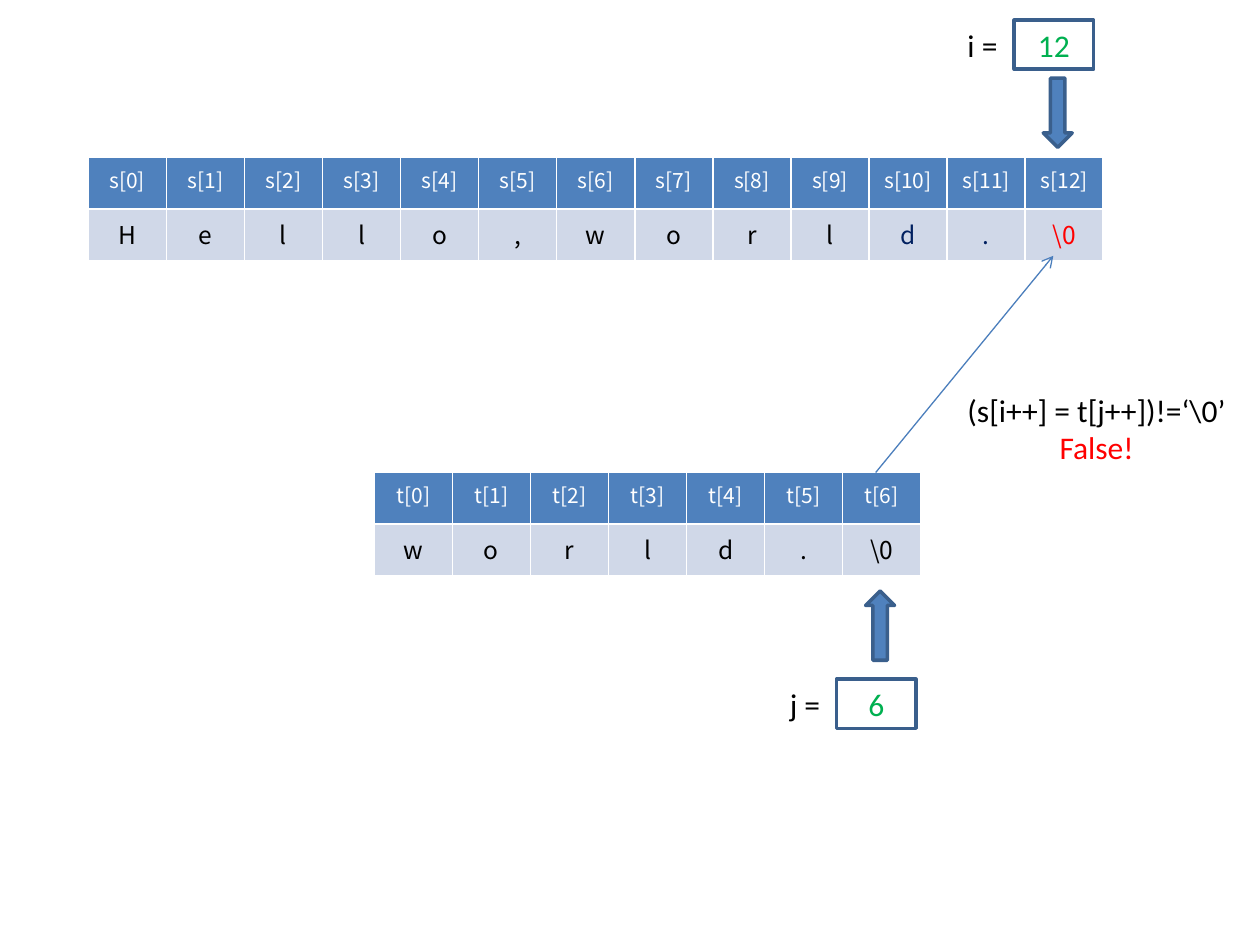
from lxml import etree
from pptx import Presentation
from pptx.dml.color import RGBColor
from pptx.enum.shapes import MSO_CONNECTOR, MSO_SHAPE
from pptx.enum.text import MSO_ANCHOR, MSO_AUTO_SIZE, PP_ALIGN
from pptx.oxml.ns import qn
from pptx.util import Inches, Pt

CENTER, LEFT = PP_ALIGN.CENTER, PP_ALIGN.LEFT
MIDDLE = MSO_ANCHOR.MIDDLE
FIT_SHAPE = MSO_AUTO_SIZE.SHAPE_TO_FIT_TEXT
RECTANGLE = MSO_SHAPE.RECTANGLE
DOWN_ARROW, UP_ARROW = MSO_SHAPE.DOWN_ARROW, MSO_SHAPE.UP_ARROW
STRAIGHT = MSO_CONNECTOR.STRAIGHT

TABLE_FONT, TEXT_FONT = "Noto Sans CJK JP", "Calibri"
CELL_WIDTH, CELL_HEIGHT = 0.62, 0.41
COLORS = {
    "white": "FFFFFF",
    "black": "000000",
    "blue": "4F81BD",
    "outline": "3A5F8C",
    "link": "4B7EBC",
    "pale": "D0D8E8",
    "navy": "002060",
    "red": "FF0000",
    "green": "00B050",
}


def color(name):
    return RGBColor.from_string(COLORS[name])


def format_paragraph(para, size, font, color_name, align=CENTER):
    para.alignment = align
    for span in para.runs:
        span.font.size = Pt(size)
        span.font.name = font
        span.font.bold = False
        span.font.color.rgb = color(color_name)


def fill_cell(cell, text, size, text_color, fill):
    cell.fill.solid()
    cell.fill.fore_color.rgb = color(fill)
    cell.text = text
    format_paragraph(cell.text_frame.paragraphs[0], size, TABLE_FONT, text_color)


def add_array(page, name, characters, left, top, highlights):
    """Draw an array as index headings over its characters; highlights maps index to colour."""
    count = len(characters)
    frame = page.shapes.add_table(2, count, Inches(left), Inches(top),
                                  Inches(CELL_WIDTH * count), Inches(CELL_HEIGHT * 2))
    table = frame.table
    for row in table.rows:
        row.height = Inches(CELL_HEIGHT)
    for index, character in enumerate(characters):
        table.columns[index].width = Inches(CELL_WIDTH)
        fill_cell(table.cell(0, index), f"{name}[{index}]", 12, "white", "blue")
        fill_cell(table.cell(1, index), character, 14,
                  highlights.get(index, "black"), "pale")


def add_block(page, kind, left, top, width, height, fill):
    block = page.shapes.add_shape(kind, Inches(left), Inches(top),
                                  Inches(width), Inches(height))
    block.shadow.inherit = False
    block.fill.solid()
    block.fill.fore_color.rgb = color(fill)
    block.line.color.rgb = color("outline")
    block.line.width = Pt(2)
    return block


def add_text(page, left, top, width, height, lines):
    """Add a text box from (text, colour, alignment) lines."""
    box = page.shapes.add_textbox(Inches(left), Inches(top), Inches(width), Inches(height))
    frame = box.text_frame
    frame.word_wrap = False
    frame.auto_size = FIT_SHAPE
    frame.text = "\n".join(text for text, _, _ in lines)
    for para, (_, color_name, align) in zip(frame.paragraphs, lines):
        format_paragraph(para, 18, TEXT_FONT, color_name, align)


def add_counter(page, name, value, left, top, arrow_kind, arrow_top):
    """Add a labelled index box and the block arrow that points at its cell."""
    add_block(page, arrow_kind, left + 0.23, arrow_top, 0.23, 0.55, "blue")
    box = add_block(page, RECTANGLE, left, top, 0.63, 0.39, "white")
    box.text_frame.text = value
    box.text_frame.vertical_anchor = MIDDLE
    format_paragraph(box.text_frame.paragraphs[0], 18, TEXT_FONT, "green")
    add_text(page, left - 0.47, top, 0.45, 0.4, [(f"{name} =", "black", LEFT)])


def add_arrow(page, start, end):
    arrow = page.shapes.add_connector(STRAIGHT, *map(Inches, start + end))
    arrow.line.color.rgb = color("link")
    arrow.line.width = Pt(0.75)
    etree.SubElement(arrow.line._get_or_add_ln(), qn("a:tailEnd"), type="arrow")
    etree.SubElement(arrow._element.spPr, qn("a:effectLst"))


def main():
    deck = Presentation()
    deck.slide_width, deck.slide_height = Inches(10), Inches(7.5)
    page = deck.slides.add_slide(deck.slide_layouts[6])

    add_array(page, "s", [*"Hello,world.", "\\0"], 0.7, 1.25,
              {10: "navy", 11: "navy", 12: "red"})
    add_array(page, "t", [*"world.", "\\0"], 2.97, 3.75, {})
    add_counter(page, "i", "12", 8.05, 0.16, DOWN_ARROW, 0.62)
    add_counter(page, "j", "6", 6.64, 5.39, UP_ARROW, 4.69)
    add_text(page, 7.58, 3.05, 2.31, 0.71,
             [("(s[i++] = t[j++])!=‘\\0’", "black", LEFT), ("False!", "red", CENTER)])
    add_arrow(page, (6.95, 3.75), (8.36, 2.03))
    deck.save("out.pptx")


if __name__ == "__main__":
    main()
